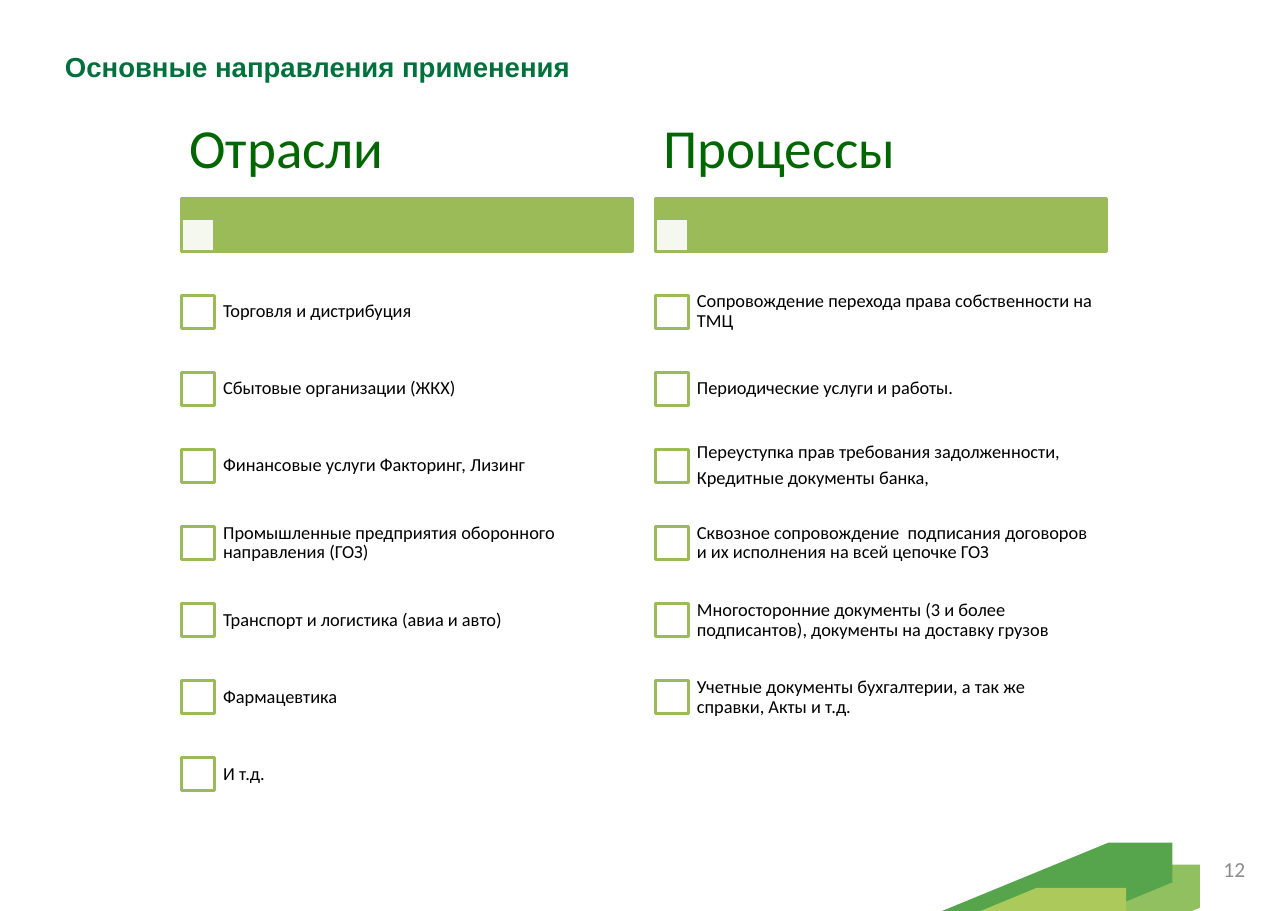
from lxml import etree
from pptx import Presentation
from pptx import util as u
from pptx.dml.color import RGBColor
from pptx.enum import shapes, text
from pptx.oxml import ns

WHITE = RGBColor(0xFF, 0xFF, 0xFF)
BLACK = RGBColor(0, 0, 0)
GRAY = RGBColor(0x8C, 0x8C, 0x8C)
OLIVE = RGBColor(0x9B, 0xBB, 0x59)
TITLE_GREEN = RGBColor(0x00, 0x70, 0x3C)
HEADING_GREEN = RGBColor(0x00, 0x66, 0x00)
LEAF = RGBColor(0x91, 0xC0, 0x61)
FOREST = RGBColor(0x56, 0xA5, 0x4C)
LIME = RGBColor(0xAB, 0xCA, 0x5B)

CELL = u.Inches(0.1)
LEFT, COLUMN_STEP, COLUMN_WIDTH = 16.5, 43, 40.9
FIRST_ROW, ROW_STEP = 24.8, 7
BOX_SIZE, TEXT_SHIFT = 3, 2.85

RIBBONS = [
    (LEAF, [(108.9, 78.5), (102.6, 78.5), (92.6, 82.7), (108.2, 82.7), (108.9, 82.4)]),
    (FOREST, [(106.4, 76.5), (100.6, 76.5), (85.5, 82.7), (100.1, 82.7), (106.4, 80.1)]),
    (LIME, [(102.2, 80.6), (94.1, 80.6), (89, 82.7), (102.2, 82.7)]),
]

LISTS = [
    ("Отрасли", [
        ["Торговля и дистрибуция"],
        ["Сбытовые организации (ЖКХ)"],
        ["Финансовые услуги Факторинг, Лизинг"],
        ["Промышленные предприятия оборонного направления (ГОЗ)"],
        ["Транспорт и логистика (авиа и авто)"],
        ["Фармацевтика"],
        ["И т.д."],
    ]),
    ("Процессы", [
        ["Сопровождение перехода права собственности на ТМЦ"],
        ["Периодические услуги и работы."],
        ["Переуступка прав требования задолженности,", "Кредитные документы банка,"],
        ["Сквозное сопровождение  подписания договоров и их исполнения на всей цепочке ГОЗ"],
        ["Многосторонние документы (3 и более подписантов), документы на доставку грузов"],
        ["Учетные документы бухгалтерии, а так же справки, Акты и т.д."],
    ]),
]


class SlideBuilder:
    """Draws styled elements on one slide, with lengths in grid cells."""

    def __init__(self, page, font="Calibri"):
        self.page = page
        self.font = font

    def cells(self, *lengths):
        return [u.Emu(round(length * CELL)) for length in lengths]

    def ribbon(self, color, points):
        start, *others = [self.cells(*point) for point in points]
        builder = self.page.shapes.build_freeform(*start, scale=1.0)
        builder.add_line_segments(others, close=True)
        shape = builder.convert_to_shape()
        shape.shadow.inherit = False
        shape.fill.solid()
        shape.fill.fore_color.rgb = color
        shape.line.fill.background()

    def rectangle(self, left, top, width, height, color, opacity=100):
        shape = self.page.shapes.add_shape(
            shapes.MSO_SHAPE.RECTANGLE, *self.cells(left, top, width, height))
        shape.shadow.inherit = False
        shape.fill.solid()
        shape.fill.fore_color.rgb = color
        shape.line.color.rgb = OLIVE
        shape.line.width = u.Pt(2)
        if opacity < 100:
            fill_color = shape.fill._xPr.find(ns.qn("a:solidFill"))[0]
            etree.SubElement(fill_color, ns.qn("a:alpha"), val=str(opacity * 1000))

    def text(self, left, top, width, height, lines, size, color, insets=(0, 0),
             font=None, bold=False, spacing=None,
             anchor=text.MSO_ANCHOR.MIDDLE, align=text.PP_ALIGN.LEFT):
        box = self.page.shapes.add_textbox(*self.cells(left, top, width, height))
        frame = box.text_frame
        frame.word_wrap = True
        frame.vertical_anchor = anchor
        frame.margin_left = frame.margin_right = u.Inches(insets[0])
        frame.margin_top = frame.margin_bottom = u.Inches(insets[1])
        for index, line in enumerate(lines):
            para = frame.add_paragraph() if index else frame.paragraphs[0]
            para.alignment = align
            if spacing:
                para.line_spacing = spacing
                para.space_after = u.Pt(round(size * 0.35, 1))
            span = para.add_run()
            span.text = line
            span.font.name = font or self.font
            span.font.size = u.Pt(size)
            span.font.bold = bold
            span.font.color.rgb = color

    def checklist(self, left, heading, items):
        self.rectangle(left, 18, COLUMN_WIDTH, 4.8, OLIVE)
        self.rectangle(left, 19.8, BOX_SIZE, BOX_SIZE, WHITE, opacity=90)
        self.text(left, 9.4, COLUMN_WIDTH, 8.6, [heading], 36, HEADING_GREEN,
                  insets=(0.07, 0.05), spacing=0.9)
        for index, lines in enumerate(items):
            top = FIRST_ROW + index * ROW_STEP
            self.rectangle(left, top + (ROW_STEP - BOX_SIZE) / 2, BOX_SIZE, BOX_SIZE, WHITE)
            self.text(left + TEXT_SHIFT, top, COLUMN_WIDTH - TEXT_SHIFT, ROW_STEP,
                      lines, 12, BLACK, insets=(0.09, 0.09), spacing=0.9)


def main():
    deck = Presentation()
    deck.slide_width, deck.slide_height = u.Inches(11.69), u.Inches(8.27)
    builder = SlideBuilder(deck.slides.add_slide(deck.slide_layouts[6]))
    for color, points in RIBBONS:
        builder.ribbon(color, points)
    builder.text(5.9, 4.5, 90.3, 3, ["Основные направления применения"], 18, TITLE_GREEN,
                 font="Arial", bold=True, anchor=text.MSO_ANCHOR.TOP)
    for index, (heading, items) in enumerate(LISTS):
        builder.checklist(LEFT + index * COLUMN_STEP, heading, items)
    builder.text(86.7, 76.7, 27.3, 4.4, ["12"], 14, GRAY, insets=(0.1, 0.05),
                 align=text.PP_ALIGN.RIGHT)
    deck.save("out.pptx")


if __name__ == "__main__":
    main()
